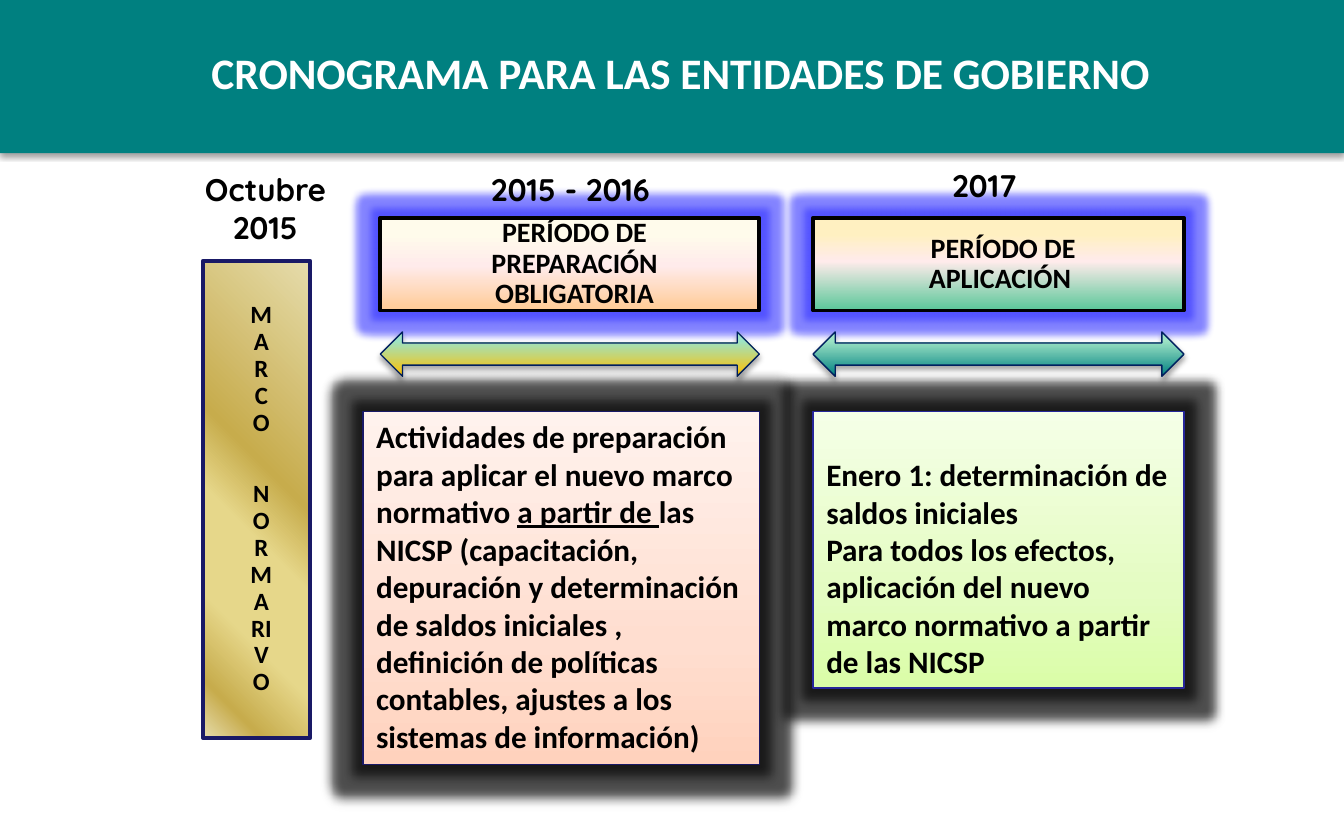
from lxml import etree
from pptx import Presentation
from pptx.dml.color import RGBColor
from pptx.enum.shapes import MSO_SHAPE as Shape
from pptx.enum.text import MSO_ANCHOR as Anchor, MSO_AUTO_SIZE as AutoSize, PP_ALIGN as Align
from pptx.oxml import parse_xml
from pptx.oxml.ns import nsdecls, qn
from pptx.util import Inches, Pt

WIDTH, HEIGHT = 10, 6.25
BLACK, WHITE, TEAL, NAVY = "000000", "FFFFFF", "008080", "191966"
HEADER_TOP, HEADER_HEIGHT = 1.62, 0.69
ARROW_TOP, ARROW_HEIGHT = 2.47, 0.33
BOX_TOP = 3.06
BOX_SHADOW = (BLACK, 38, 3.1, 1.6)
ARROW_SHADOW = (BLACK, 35, 3.1, 1.8)
BLUE_GLOW = ("3333FF", 60, 8)
DARK_GLOW = (BLACK, 60, 11)
LABEL_INSETS = (0.51, 0.04, 0.44, 0.04)

TITLE = "CRONOGRAMA PARA LAS ENTIDADES DE GOBIERNO"
DATES = [
    ("Octubre 2015", (1.39, 1.22, 1.17, 0.66)),
    ("2015 - 2016", (3.36, 1.22, 1.77, 0.38)),
    ("2017", (6.57, 1.19, 1.51, 0.38)),
]
FRAMEWORK = ["MARCO", "NORMARIVO"]
GOLD = [(0, "E6DCAC"), (43, "C7AC4C"), (57, "E6D78A"),
        (75, "E6D78A"), (90, "C7AC4C"), (100, "E6DCAC")]
PERIODS = [
    {
        "left": 2.83, "width": 2.82,
        "name": "PERÍODO DE PREPARACIÓN OBLIGATORIA",
        "name_fill": [(2, "FFCC99"), (48, "FFEBEB"), (82, "FFFBEB")],
        "arrow_fill": [(0, "FFC000"), (80, "9DE3C5"), (100, "9CE6C6")],
        "box_left": 2.7, "box_height": 2.63, "box_inset": 0.05, "box_line": NAVY,
        "box_fill": [(0, "FFD2BD"), (35, "FFDED0"), (100, "FFF2ED")],
        "text": [[
            ("Actividades de preparación para aplicar el nuevo marco normativo ", False),
            ("a partir de ", True),
            ("las NICSP (capacitación, depuración y determinación de saldos iniciales , "
             "definición de políticas contables, ajustes a los sistemas de información)", False),
        ]],
    },
    {
        "left": 6.05, "width": 2.76,
        "name": "PERÍODO DE APLICACIÓN ",
        "name_fill": [(2, "60C99C"), (53, "FFEBEB"), (82, "FFF0C1")],
        "arrow_fill": [(0, TEAL), (80, "9DE3C5"), (100, "9CE6C6")],
        "box_left": 6.05, "box_height": 2.06, "box_inset": 0.33, "box_line": "262699",
        "box_fill": [(0, "DAFDA7"), (35, "E4FCC2"), (100, "F5FFE7")],
        "text": [
            [("Enero 1: determinación de saldos iniciales", False)],
            [("Para todos los efectos, aplicación del nuevo marco normativo "
              "a partir de las NICSP", False)],
        ],
    },
]


def color(value):
    return RGBColor.from_string(value)


def add_gradient(shape, stops, angle):
    marks = "".join(f'<a:gs pos="{position * 1000}"><a:srgbClr val="{value}"/></a:gs>'
                    for position, value in stops)
    gradient = parse_xml(f'<a:gradFill {nsdecls("a")} rotWithShape="1"><a:gsLst>{marks}</a:gsLst>'
                         f'<a:lin ang="{angle * 60000}" scaled="0"/></a:gradFill>')
    shape._element.spPr.find(qn("a:prstGeom")).addnext(gradient)


def add_effects(shape, glow, shadow):
    effects = shape._element.spPr.find(qn("a:effectLst"))

    def add_effect(tag, value, alpha, **attributes):
        effect = etree.SubElement(effects, qn(tag), **attributes)
        paint = etree.SubElement(effect, qn("a:srgbClr"), val=value)
        etree.SubElement(paint, qn("a:alpha"), val=str(alpha * 1000))

    if glow:
        value, alpha, radius = glow
        add_effect("a:glow", value, alpha, rad=str(Pt(radius)))
    if shadow:
        value, alpha, blur, distance = shadow
        add_effect("a:outerShdw", value, alpha, blurRad=str(Pt(blur)), dist=str(Pt(distance)),
                   dir="5400000", rotWithShape="0")


def draw(slide, kind, place, fill, line=None, angle=270, glow=None, shadow=None):
    shape = slide.shapes.add_shape(kind, *map(Inches, place))
    shape.shadow.inherit = False
    if isinstance(fill, str):
        shape.fill.solid()
        shape.fill.fore_color.rgb = color(fill)
    else:
        add_gradient(shape, fill, angle)
    if line:
        line_color, line_width = line
        shape.line.color.rgb = color(line_color)
        shape.line.width = Pt(line_width)
    else:
        shape.line.fill.background()
    add_effects(shape, glow, shadow)
    return shape


def write(shape, paragraphs, size, font="Calibri", ink=BLACK, align=Align.CENTER,
          anchor=Anchor.TOP, insets=(0.1, 0.05, 0.1, 0.05), spacing=None, after=None, grow=False):
    frame = shape.text_frame
    frame.word_wrap = True
    frame.auto_size = AutoSize.SHAPE_TO_FIT_TEXT if grow else AutoSize.NONE
    frame.vertical_anchor = anchor
    frame.margin_left, frame.margin_top, frame.margin_right, frame.margin_bottom = map(Inches, insets)
    for index, runs in enumerate(paragraphs):
        paragraph = frame.paragraphs[0] if index == 0 else frame.add_paragraph()
        paragraph.alignment = align
        if spacing:
            paragraph.line_spacing = spacing
        if after:
            paragraph.space_after = Pt(after)
        for text, underlined in runs:
            run = paragraph.add_run()
            run.text = text
            run.font.name, run.font.size, run.font.bold = font, Pt(size), True
            run.font.color.rgb = color(ink)
            if underlined:
                run.font.underline = True


def main():
    presentation = Presentation()
    presentation.slide_width, presentation.slide_height = Inches(WIDTH), Inches(HEIGHT)
    slide = presentation.slides.add_slide(presentation.slide_layouts[6])

    draw(slide, Shape.RECTANGLE, (0, 0, WIDTH, 1.14), TEAL, shadow=BOX_SHADOW)
    title = slide.shapes.add_textbox(*map(Inches, (1.08, 0.26, 7.97, 0.56)))
    write(title, [[(TITLE, False)]], 23.3, ink=WHITE, anchor=Anchor.MIDDLE)

    for period in PERIODS:
        left, width = period["left"], period["width"]
        header = draw(slide, Shape.RECTANGLE, (left, HEADER_TOP, width, HEADER_HEIGHT),
                      period["name_fill"], (BLACK, 2), glow=BLUE_GLOW)
        write(header, [[(period["name"], False)]], 15, anchor=Anchor.MIDDLE,
              insets=LABEL_INSETS, spacing=0.9)
        draw(slide, Shape.LEFT_RIGHT_ARROW, (left, ARROW_TOP, width, ARROW_HEIGHT),
             period["arrow_fill"], ("002060", 0.75), shadow=ARROW_SHADOW)
        box_left = period["box_left"]
        box = draw(slide, Shape.RECTANGLE,
                   (box_left, BOX_TOP, left + width - box_left, period["box_height"]),
                   period["box_fill"], (period["box_line"], 0.75),
                   glow=DARK_GLOW, shadow=BOX_SHADOW)
        write(box, period["text"], 16.7, align=Align.LEFT,
              insets=(0.1, period["box_inset"], 0.1, 0.05), grow=True)

    for date, place in DATES:
        label = slide.shapes.add_textbox(*map(Inches, place))
        write(label, [[(date, False)]], 16.7, font="Quicksand", grow=True)

    bar = draw(slide, Shape.RECTANGLE, (1.51, 1.94, 0.8, 3.55), GOLD, (NAVY, 2), angle=135)
    write(bar, [[(word, False)] for word in FRAMEWORK], 13.3, anchor=Anchor.MIDDLE,
          insets=(0.52, 0.04, 0.45, 0.04), spacing=0.9, after=24)

    presentation.save("out.pptx")


if __name__ == "__main__":
    main()
